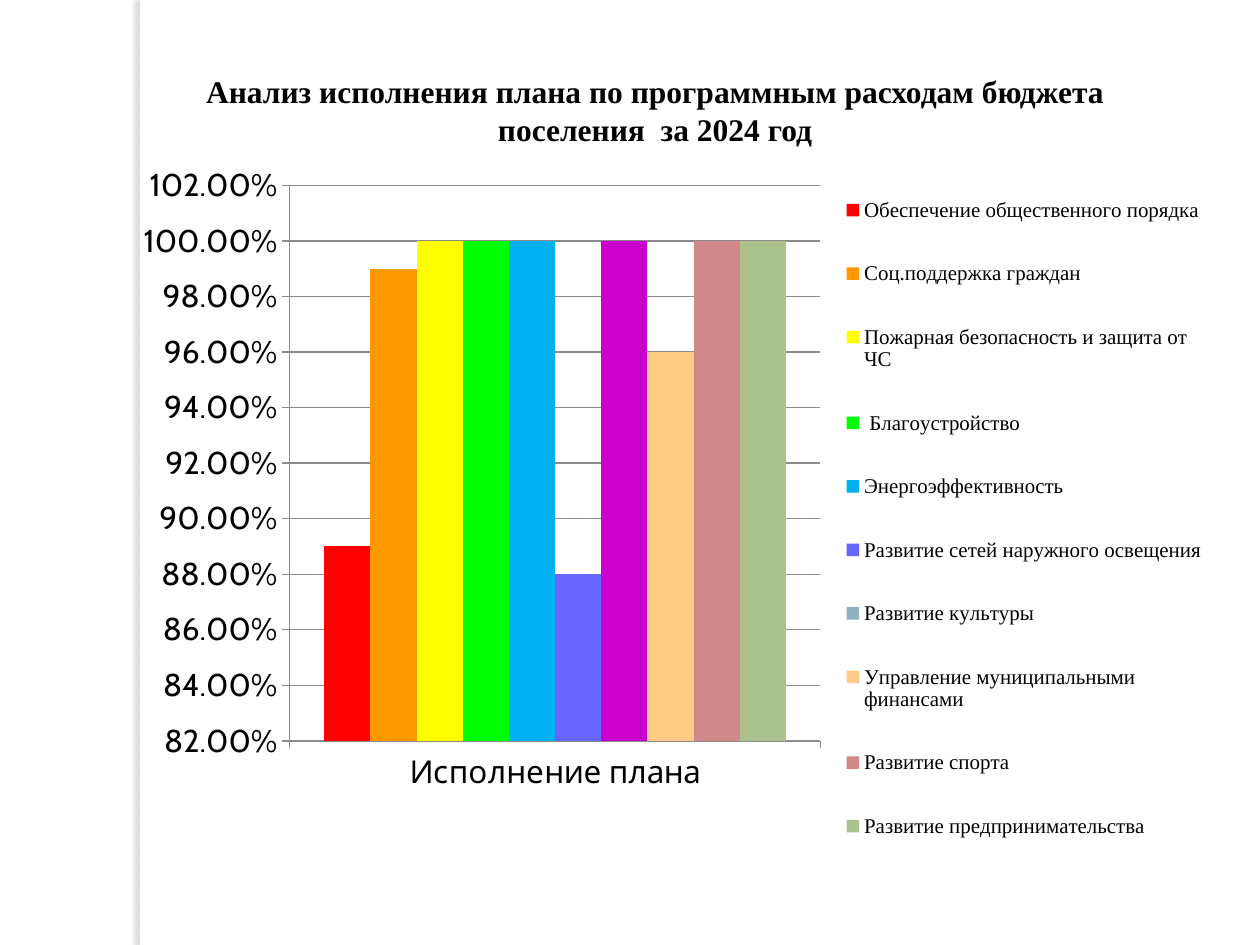
from lxml.etree import SubElement
from pptx import Presentation
from pptx.chart.data import CategoryChartData
from pptx.dml.color import RGBColor
from pptx.enum.chart import XL_CHART_TYPE, XL_LEGEND_POSITION, XL_TICK_MARK
from pptx.enum.shapes import MSO_SHAPE
from pptx.enum.text import PP_ALIGN
from pptx.oxml import parse_xml
from pptx.oxml.ns import nsdecls, qn
from pptx.util import Inches, Pt

SERIF = "Times New Roman"
SANS = "Cabin"

# Programme, share of the plan fulfilled, colour
PROGRAMS = [
    ("Обеспечение общественного порядка", 0.89, "FF0000"),
    ("Соц.поддержка граждан", 0.99, "FF9900"),
    ("Пожарная безопасность и защита от ЧС", 1, "FFFF00"),
    (" Благоустройство", 1, "00FF00"),
    ("Энергоэффективность", 1, "00B0F0"),
    ("Развитие сетей наружного освещения", 0.88, "6666FF"),
    ("Развитие культуры", 1, "8FB1C0"),
    ("Управление муниципальными финансами", 0.96, "FFCC88"),
    ("Развитие спорта", 1, "D18888"),
    ("Развитие предпринимательства", 1, "ABC28E"),
]
CULTURE = 6  # its column differs in colour from its legend key


def color(text):
    return RGBColor.from_string(text)


def paint(fmt, shade):
    fmt.fill.solid()
    fmt.fill.fore_color.rgb = color(shade)


def style(font, size, name):
    font.size = Pt(size)
    font.name = name
    font.color.rgb = color("000000")


def add_band(slide, *box):
    band = slide.shapes.add_shape(MSO_SHAPE.RECTANGLE, *box)
    paint(band, "FFFFFF")
    band.line.fill.background()
    # Soft shadow on the left edge
    band._element.spPr.append(parse_xml(
        f'<a:effectLst {nsdecls("a")}>'
        f'<a:outerShdw blurRad="{Pt(3)}" dist="{Pt(3)}" dir="10800000" algn="tl" rotWithShape="0">'
        '<a:srgbClr val="736F63"><a:alpha val="25000"/></a:srgbClr>'
        '</a:outerShdw></a:effectLst>'))


def add_title(slide, *box):
    frame = slide.shapes.add_textbox(*box).text_frame
    frame.word_wrap = True
    para = frame.paragraphs[0]
    para.alignment = PP_ALIGN.CENTER
    run = para.add_run()
    run.text = "Анализ исполнения плана по программным расходам бюджета поселения  за 2024 год"
    style(run.font, 18, SERIF)
    run.font.bold = True


def set_layout(part, x, y, w, h, inner=False):
    """Place a chart part by fractions of the chart's size."""
    for old in part.findall(qn("c:layout")):
        part.remove(old)
    layout = parse_xml(f'<c:layout {nsdecls("c")}><c:manualLayout/></c:layout>')
    items = [("layoutTarget", "inner")] if inner else []
    items += [("xMode", "edge"), ("yMode", "edge"), ("x", x), ("y", y), ("w", w), ("h", h)]
    for tag, val in items:
        SubElement(layout[0], qn(f"c:{tag}")).set("val", str(val))
    if inner:
        part.insert(0, layout)
    else:
        part.find(qn("c:legendPos")).addnext(layout)


def add_plan(slide, *box):
    data = CategoryChartData(number_format="0.00%")
    data.categories = ["Исполнение плана"]
    for name, share, _ in PROGRAMS:
        data.add_series(name, [share])
    chart = slide.shapes.add_chart(XL_CHART_TYPE.COLUMN_CLUSTERED, *box, data).chart
    chart.has_title = False
    style(chart.font, 18, SANS)

    # Columns
    plot = chart.plots[0]
    plot.gap_width = 150
    plot.overlap = 0
    plot.vary_by_categories = False
    for series, (_, _, shade) in zip(plot.series, PROGRAMS):
        series.invert_if_negative = False
        paint(series.format, shade)
    paint(plot.series[CULTURE].points[0].format, "CC00CC")

    # Axes
    axis = chart.value_axis
    axis.minimum_scale, axis.maximum_scale, axis.major_unit = 0.82, 1.02, 0.02
    axis.tick_labels.number_format = "0.00%"
    axis.tick_labels.number_format_is_linked = False
    axis.has_major_gridlines = True
    for side in (axis, chart.category_axis):
        side.major_tick_mark = XL_TICK_MARK.OUTSIDE
        style(side.tick_labels.font, 18, SANS)
    for part in (axis, chart.category_axis, axis.major_gridlines):
        part.format.line.color.rgb = color("8B8B8B")
        part.format.line.width = Pt(0.75)

    # Legend
    chart.has_legend = True
    legend = chart.legend
    legend.position = XL_LEGEND_POSITION.RIGHT
    legend.include_in_layout = False
    style(legend.font, 12, SERIF)

    area = chart._chartSpace.chart.plotArea
    set_layout(area, 0.134, 0.042, 0.497, 0.767, inner=True)
    set_layout(legend._element, 0.649, 0.004, 0.345, 0.995)


def main():
    prs = Presentation()
    prs.slide_width, prs.slide_height = Inches(10), Inches(7.5)
    slide = prs.slides.add_slide(prs.slide_layouts[6])
    add_band(slide, Inches(1.11), Inches(0), Inches(0.08), Inches(7.5))
    add_title(slide, Inches(1.38), Inches(0.52), Inches(7.64), Inches(1.01))
    add_plan(slide, Inches(1.14), Inches(1.23), Inches(8.5), Inches(5.75))
    prs.save("out.pptx")


if __name__ == "__main__":
    main()
